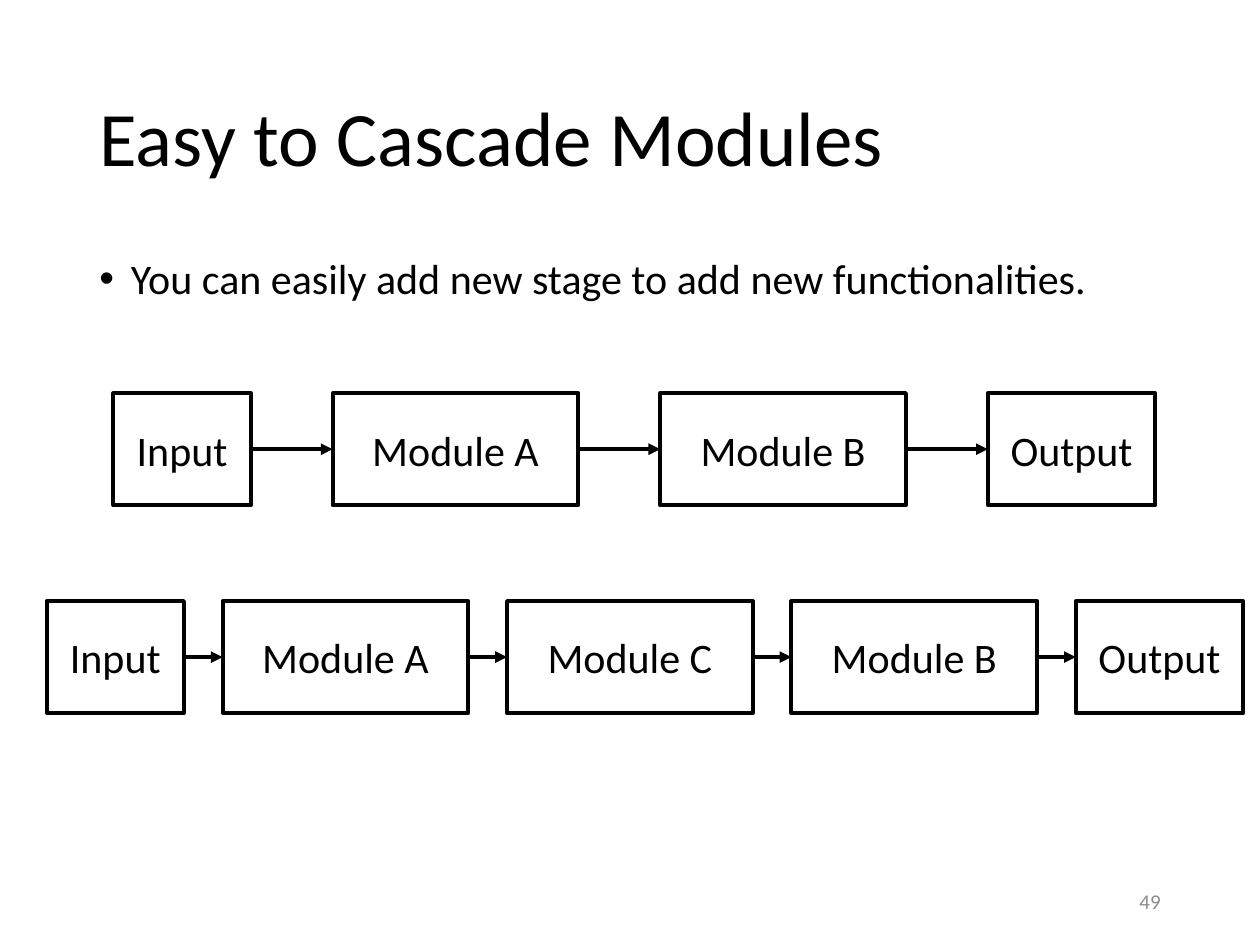
from dataclasses import dataclass
from itertools import pairwise

from lxml import etree
from pptx import Presentation
from pptx import util as u
from pptx.dml.color import RGBColor
from pptx.enum import shapes, text
from pptx.oxml import ns


@dataclass(frozen=True)
class Theme:
    """Colours, font and type sizes of the slide."""
    font: str = "Calibri"
    ink: str = "000000"
    paper: str = "FFFFFF"
    muted: str = "8C8C8C"
    title: int = 44
    body: int = 24
    small: int = 12
    line: float = 2.25


class Deck:
    """Draws on one slide with a grid of 100 columns by 75 rows."""

    def __init__(self, theme):
        """Open a 10 by 7.5 inch deck with one blank slide."""
        self.theme = theme
        self.prs = Presentation()
        self.prs.slide_width, self.prs.slide_height = u.Inches(10), u.Inches(7.5)
        self.slide = self.prs.slides.add_slide(self.prs.slide_layouts[6])

    def grid(self, col, row, cols, rows):
        """Turn grid cells into slide lengths."""
        wide, high = self.prs.slide_width / 100, self.prs.slide_height / 75
        return [round(n) for n in (col * wide, row * high, cols * wide, rows * high)]

    def letter(self, shape, words, size, color, align, anchor):
        """Set one styled paragraph in a shape and return it."""
        frame = shape.text_frame
        frame.word_wrap = True
        frame.vertical_anchor = anchor
        para = frame.paragraphs[0]
        para.text = words
        para.alignment = align
        para.font.name = self.theme.font
        para.font.size = u.Pt(size)
        para.font.color.rgb = RGBColor.from_string(color)
        return para

    def label(self, area, words, size, color=None, align=text.PP_ALIGN.LEFT,
              anchor=text.MSO_ANCHOR.MIDDLE):
        """Add a text box and return its paragraph."""
        shape = self.slide.shapes.add_textbox(*self.grid(*area))
        return self.letter(shape, words, size, color or self.theme.ink, align, anchor)

    def title(self, area, words):
        """Add the slide title."""
        self.label(area, words, self.theme.title).line_spacing = 0.9

    def bullet(self, area, words):
        """Add a bulleted line."""
        para = self.label(area, words, self.theme.body, anchor=text.MSO_ANCHOR.TOP)
        para.line_spacing = 0.9
        para.space_before = u.Pt(10)
        props = para._p.get_or_add_pPr()
        props.set("marL", str(u.Inches(0.25)))
        props.set("indent", str(-u.Inches(0.25)))
        etree.SubElement(props, ns.qn("a:buFont")).set("typeface", "Arial")
        etree.SubElement(props, ns.qn("a:buChar")).set("char", "•")
        props.append(props.find(ns.qn("a:defRPr")))

    def box(self, area, words):
        """Add an outlined box with centred text."""
        theme = self.theme
        shape = self.slide.shapes.add_shape(shapes.MSO_SHAPE.RECTANGLE, *self.grid(*area))
        shape.shadow.inherit = False
        shape.fill.solid()
        shape.fill.fore_color.rgb = RGBColor.from_string(theme.paper)
        shape.line.color.rgb = RGBColor.from_string(theme.ink)
        shape.line.width = u.Pt(theme.line)
        frame = shape.text_frame
        frame.margin_top = frame.margin_bottom = u.Inches(0.1)
        self.letter(shape, words, theme.body, theme.ink,
                    text.PP_ALIGN.CENTER, text.MSO_ANCHOR.MIDDLE)
        return shape

    def arrow(self, left, right):
        """Join two boxes side to side with an arrow."""
        link = self.slide.shapes.add_connector(shapes.MSO_CONNECTOR.STRAIGHT, 0, 0, 0, 0)
        link.begin_connect(left, 3)
        link.end_connect(right, 1)
        link.line.color.rgb = RGBColor.from_string(self.theme.ink)
        link.line.width = u.Pt(self.theme.line)
        props = link._element.spPr
        etree.SubElement(props.find(ns.qn("a:ln")), ns.qn("a:tailEnd")).set("type", "triangle")
        etree.SubElement(props, ns.qn("a:effectLst"))

    def chain(self, col, row, gap, stages):
        """Lay out evenly spaced stages and join each to the next."""
        widths = {"Input": 10.9, "Output": 13.3}
        boxes = []
        for stage in stages:
            width = widths.get(stage, 19.5)
            boxes.append(self.box((col, row, width, 8.9), stage))
            col += width + gap
        for left, right in pairwise(boxes):
            self.arrow(left, right)


def main():
    """Build and save the slide."""
    theme = Theme()
    deck = Deck(theme)
    deck.title((6.9, 4, 86.2, 14.5), "Easy to Cascade Modules")
    deck.bullet((6.9, 20, 86.2, 47.6),
                "You can easily add new stage to add new functionalities.")
    deck.label((70.6, 69.5, 22.5, 4), "49", theme.small, theme.muted, text.PP_ALIGN.RIGHT)
    deck.chain(9, 31.2, 6.5, ["Input", "Module A", "Module B", "Output"])
    deck.chain(3.7, 47.7, 3.07, ["Input", "Module A", "Module C", "Module B", "Output"])
    deck.prs.save("out.pptx")


if __name__ == "__main__":
    main()
